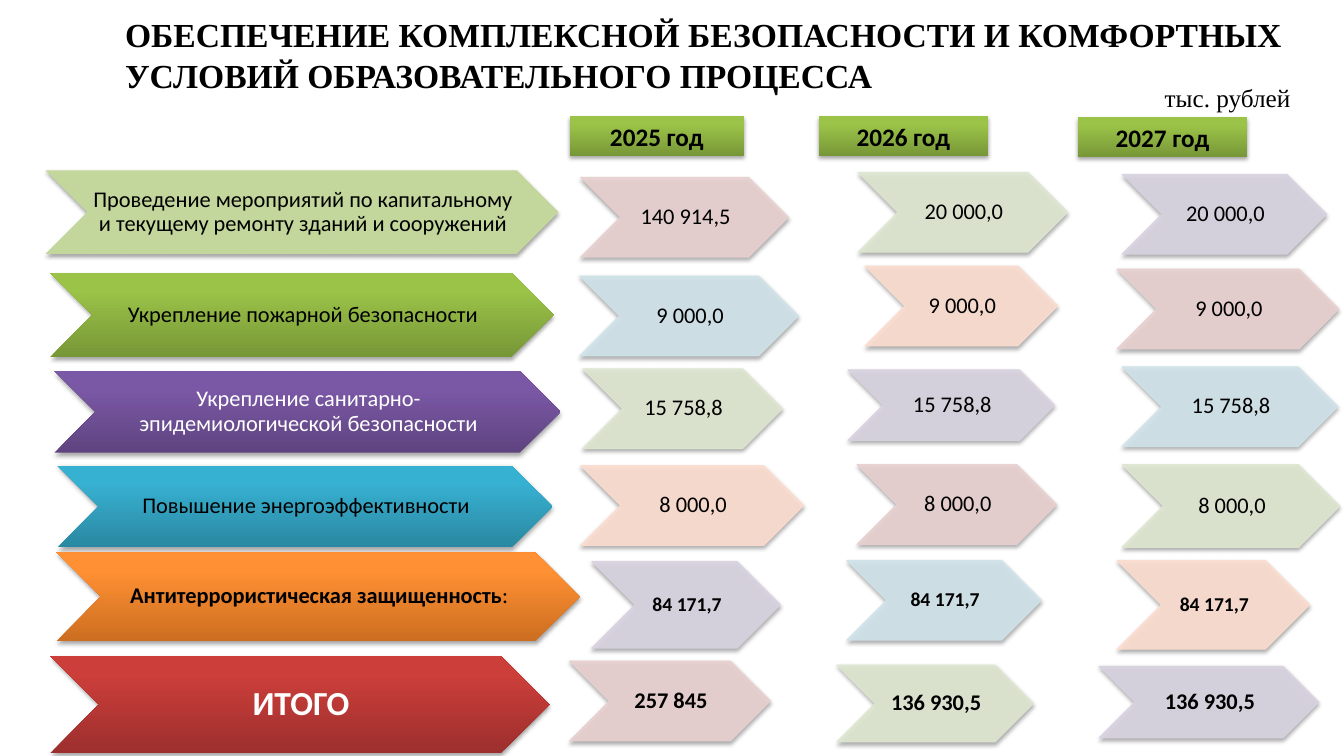
from lxml import etree
from pptx import Presentation
from pptx.dml.color import RGBColor
from pptx.enum.shapes import MSO_SHAPE
from pptx.enum.text import MSO_ANCHOR, PP_ALIGN
from pptx.oxml.ns import qn
from pptx.util import Inches, Pt

CHEVRON, RECTANGLE = MSO_SHAPE.CHEVRON, MSO_SHAPE.RECTANGLE
LEFT, CENTER = PP_ALIGN.LEFT, PP_ALIGN.CENTER
TOP, MIDDLE, BOTTOM = MSO_ANCHOR.TOP, MSO_ANCHOR.MIDDLE, MSO_ANCHOR.BOTTOM
TITLE_ONLY = 5

COLORS = {
    "black": "000000", "white": "FFFFFF", "olive": "C3D69B",
    "green_dark": "779737", "green": "9BC348",
    "purple_dark": "5F4480", "purple": "7B58A6",
    "teal_dark": "2A88A2", "teal": "37B1D2",
    "orange_dark": "CC6E20", "orange": "FF9034",
    "red_dark": "9C2F2D", "red": "CB3E3A",
    "rose": "E8D0D0", "sage": "DEE7D1", "lilac": "D8D3E0",
    "sky": "D0E3EA", "peach": "FCDDCF",
}
PASTELS = ["rose", "sage", "lilac", "sky", "peach"]
CHEVRON_INSETS = (0.02, 0.01, 0, 0.01)
BOX_INSETS = (0.09, 0.05, 0.09, 0.05)

LABEL_LEFT = 0.5
YEAR_LEFTS = [5.76, 8.5, 11.13]
YEAR_BOXES = [("2025 год", 5.65, 1.15, 1.73), ("2026 год", 8.12, 1.15, 1.68),
              ("2027 год", 10.69, 1.16, 1.68)]

# Row: top, label (runs, fill, text colour, size, x nudge, width, height),
# amount size, bold, then per year: amount, x nudge, y nudge, width, height
ROWS = [
    (1.69, (["Проведение мероприятий по капитальному и текущему ремонту зданий и сооружений"],
            "olive", "black", 16, -0.05, 5.09, 0.83), 16, False,
     [("140 914,5", 0, 0.07, 2.06, 0.79), ("20 000,0", 0.01, 0.02, 2.08, 0.79),
      ("20 000,0", 0, 0.04, 2.03, 0.79)]),
    (2.71, (["Укрепление пожарной безопасности"],
            "green", "black", 16, 0, 4.99, 0.83), 16, False,
     [("9 000,0", -0.01, 0.03, 2.17, 0.79), ("9 000,0", 0.08, -0.07, 1.91, 0.79),
      ("9 000,0", -0.05, -0.04, 2.2, 0.79)]),
    (3.68, (["Укрепление санитарно-эпидемиологической безопасности"],
            "purple", "white", 16, 0.04, 5.02, 0.81), 16, False,
     [("15 758,8", 0.02, -0.02, 1.98, 0.79), ("15 758,8", -0.09, -0.01, 2.05, 0.7),
      ("15 758,8", 0, -0.04, 2.14, 0.79)]),
    (4.62, (["Повышение энергоэффективности"],
            "teal", "black", 16, 0.07, 4.91, 0.81), 16, False,
     [("8 000,0", 0, 0, 2.21, 0.79), ("8 000,0", 0, -0.01, 1.98, 0.79),
      ("8 000,0", 0, -0.01, 2.16, 0.82)]),
    (5.48, (["Антитеррористическая защищенность", ":"],
            "orange", "black", 16, 0.06, 5.19, 0.88), 14, True,
     [("84 171,7", 0.11, 0.09, 1.87, 0.86), ("84 171,7", -0.1, 0.08, 1.93, 0.79),
      ("84 171,7", -0.05, 0.08, 1.91, 0.88)]),
    (6.51, (["ИТОГО"], "red", "white", 24, 0, 4.95, 0.96), 16, True,
     [("257 845", -0.11, 0.05, 1.99, 0.79), ("136 930,5", -0.2, 0.09, 1.95, 0.76),
      ("136 930,5", -0.23, 0.1, 2.18, 0.71)]),
]


def rgb(name):
    return RGBColor.from_string(COLORS[name])


def write_text(shape, runs, size, color="black", bold=False, font="Calibri",
               align=CENTER, anchor=MIDDLE, insets=BOX_INSETS, spacing=None):
    """Fill a shape with one paragraph; any run after the first is regular weight."""
    frame = shape.text_frame
    frame.word_wrap = True
    frame.vertical_anchor = anchor
    (frame.margin_left, frame.margin_top,
     frame.margin_right, frame.margin_bottom) = map(Inches, insets)
    para = frame.paragraphs[0]
    para.alignment = align
    para.line_spacing = spacing
    para.font.name, para.font.size, para.font.bold = font, Pt(size), bold
    para.font.color.rgb = rgb(color)
    for index, text in enumerate(runs):
        span = para.add_run()
        span.text = text
        if index:
            span.font.bold = False


def add_soft_shadow(shape):
    shape.shadow.inherit = False
    effects = shape._element.spPr.find(qn("a:effectLst"))
    shadow = etree.SubElement(effects, qn("a:outerShdw"), blurRad=str(Pt(3.1)),
                              dist=str(Pt(1.8)), dir="5400000", rotWithShape="0")
    tint = etree.SubElement(shadow, qn("a:srgbClr"), val=COLORS["black"])
    etree.SubElement(tint, qn("a:alpha"), val="35000")


def add_block(page, kind, place, color):
    """Add a shadowed shape: pastel translucent, gradient if a dark tone exists, else plain."""
    shape = page.shapes.add_shape(kind, *map(Inches, place))
    shape.line.fill.background()
    dark = color + "_dark"
    if dark in COLORS:
        shape.fill.gradient()
        shape.fill.gradient_angle = 90
        for stop, tone, position in zip(shape.fill.gradient_stops, (dark, color), (0, 0.8)):
            stop.color.rgb = rgb(tone)
            stop.position = position
    else:
        shape.fill.solid()
        shape.fill.fore_color.rgb = rgb(color)
    if color in PASTELS:
        shape.line.color.rgb = rgb(color)
        shape.line.width = Pt(0.75)
        for tint in shape._element.spPr.iter(qn("a:srgbClr")):
            etree.SubElement(tint, qn("a:alpha"), val="90000")
    add_soft_shadow(shape)
    return shape


def add_chevron(page, place, fill, runs, size, color="black", bold=False):
    chevron = add_block(page, CHEVRON, place, fill)
    write_text(chevron, runs, size, color, bold, insets=CHEVRON_INSETS, spacing=0.9)


def add_row(page, number, row):
    top, (runs, fill, color, size, nudge, width, height), amount_size, bold, amounts = row
    add_chevron(page, (LABEL_LEFT + nudge, top, width, height), fill, runs, size, color, bold)
    for year, (amount, right, down, width, height) in enumerate(amounts):
        pastel = PASTELS[(number * len(YEAR_LEFTS) + year) % len(PASTELS)]
        place = (YEAR_LEFTS[year] + right, top + down, width, height)
        add_chevron(page, place, pastel, [amount], amount_size, bold=bold)


def add_title(page):
    title = page.shapes.title
    title.left, title.top, title.width, title.height = map(Inches, (1.15, 0.14, 12.13, 0.85))
    write_text(title, ["ОБЕСПЕЧЕНИЕ КОМПЛЕКСНОЙ БЕЗОПАСНОСТИ И КОМФОРТНЫХ "
                       "УСЛОВИЙ ОБРАЗОВАТЕЛЬНОГО ПРОЦЕССА"],
               24, bold=True, font="Times New Roman", align=LEFT, anchor=BOTTOM)


def main():
    deck = Presentation()
    deck.slide_width, deck.slide_height = Inches(13.33), Inches(7.5)
    page = deck.slides.add_slide(deck.slide_layouts[TITLE_ONLY])
    add_title(page)
    for number, row in enumerate(ROWS):
        add_row(page, number, row)
    for year, left, top, width in YEAR_BOXES:
        box = add_block(page, RECTANGLE, (left, top, width, 0.4), "green")
        write_text(box, [year], 18, bold=True)
    unit = page.shapes.add_textbox(*map(Inches, (11.2, 0.77, 1.95, 0.4)))
    write_text(unit, ["тыс. рублей"], 18, font="Times New Roman", anchor=TOP)
    deck.save("out.pptx")


if __name__ == "__main__":
    main()
